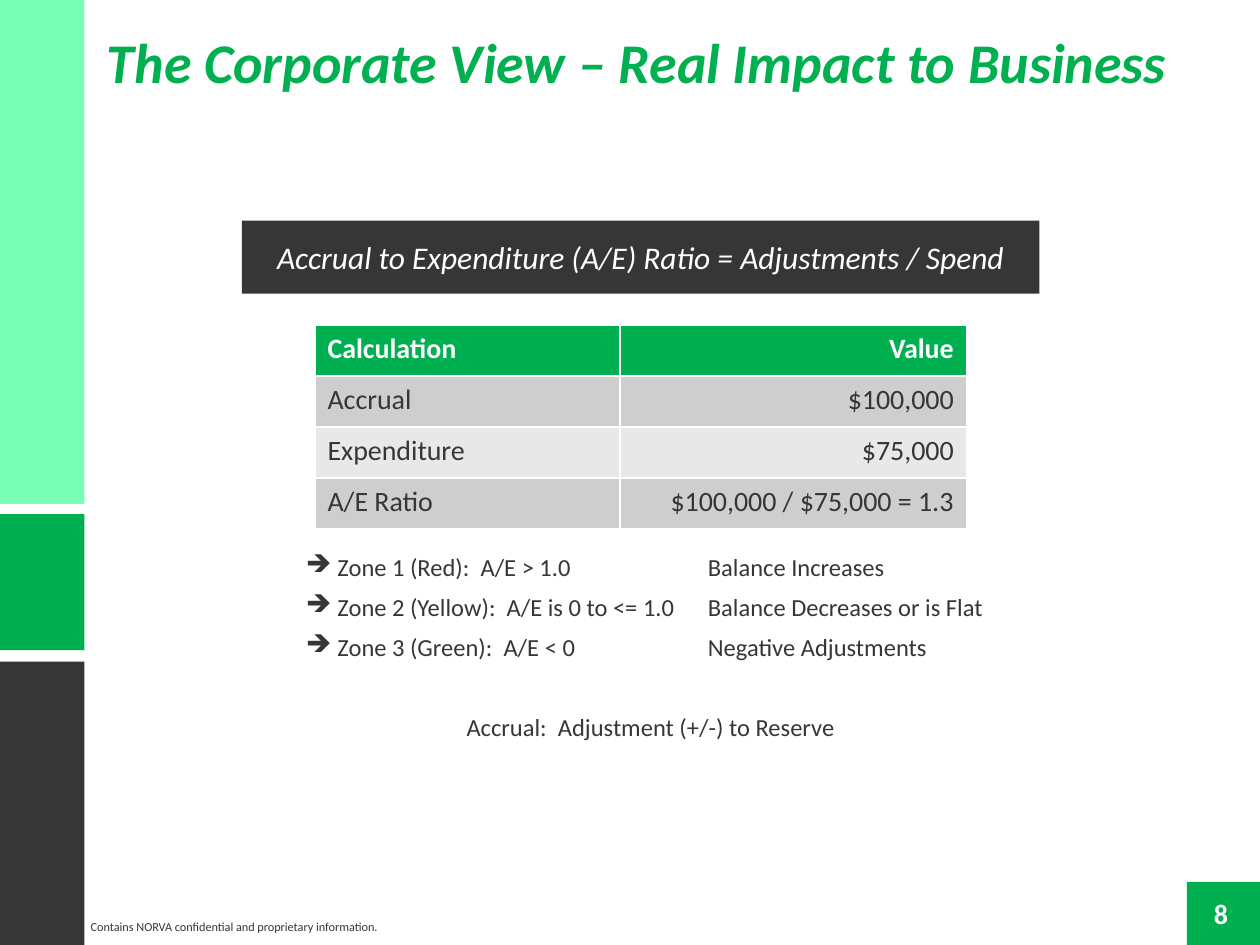
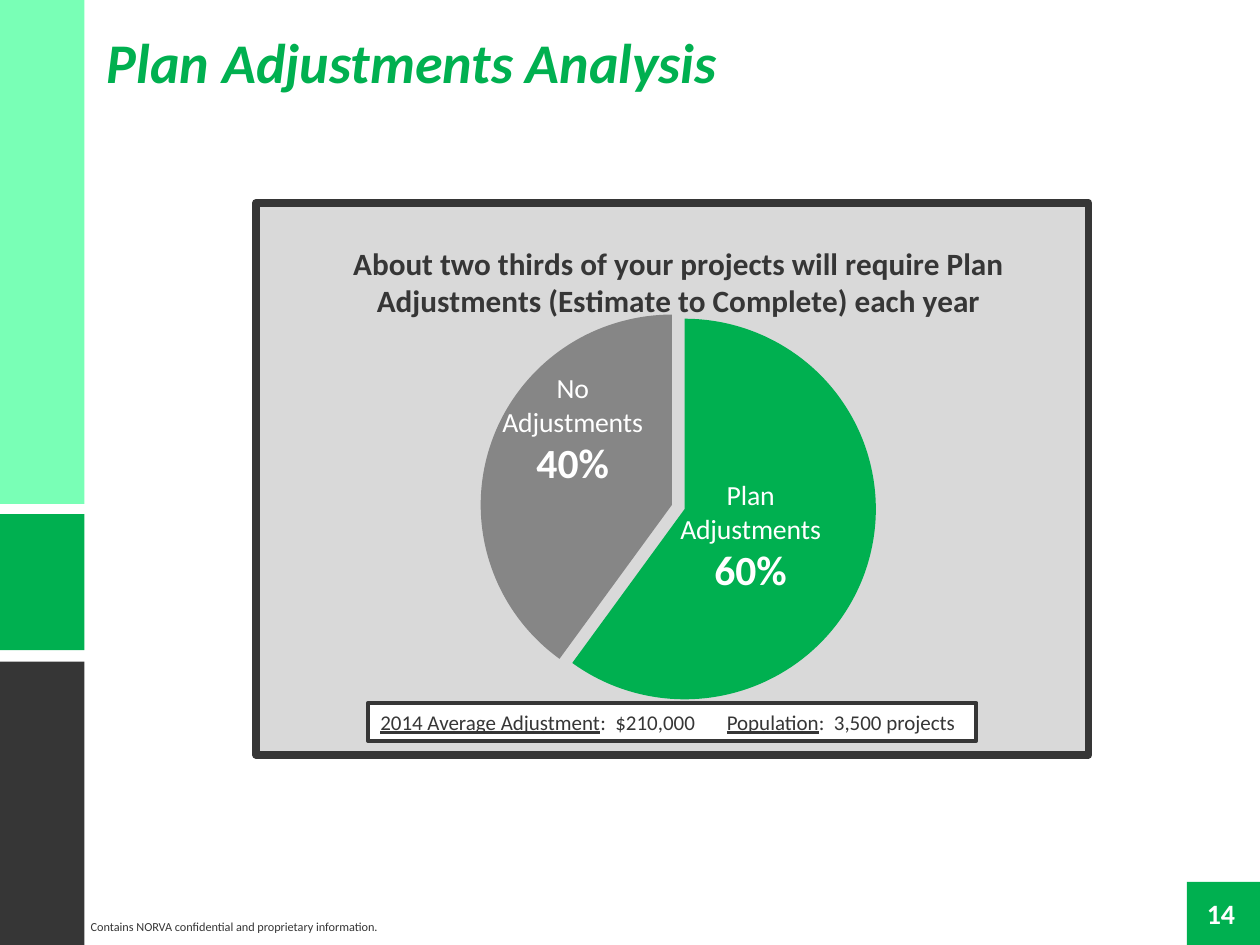
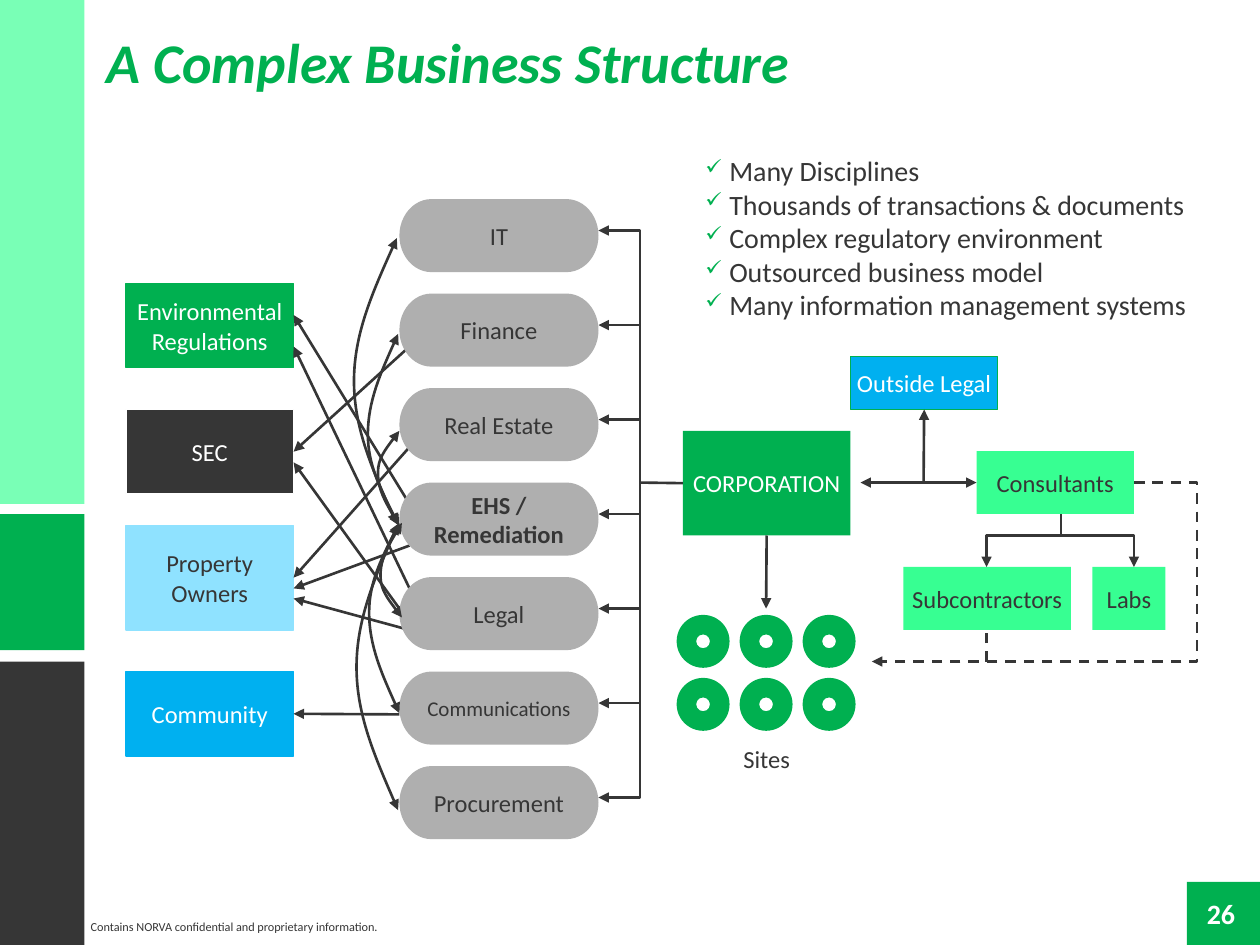
from dataclasses import dataclass, field
from typing import Any, NamedTuple, Optional, Sequence

import lxml.etree
import pptx
import pptx.chart.data
import pptx.dml.color
import pptx.enum.chart
import pptx.enum.dml
import pptx.enum.shapes
import pptx.enum.text
import pptx.oxml
import pptx.oxml.ns
import pptx.util

Inches = pptx.util.Inches
Pt = pptx.util.Pt
qn = pptx.oxml.ns.qn
SHAPE = pptx.enum.shapes.MSO_SHAPE
ALIGN = pptx.enum.text.PP_ALIGN
ANCHOR = pptx.enum.text.MSO_ANCHOR

FONT = "Calibri"
GREEN, MINT, LIME = "00B050", "79FFB6", "37FF92"
DARK, WHITE, BLUE, SKY = "363636", "FFFFFF", "00B0F0", "8FE2FF"
PILL, SLICE, PANEL = "AFAFAF", "868686", "D9D9D9"
ROW_FILLS = ["CECECE", "E8E8E8"]

Point = tuple[float, float]
Area = tuple[float, float, float, float]


@dataclass(frozen=True)
class Look:
    size: float
    color: str = DARK
    align: Any = ALIGN.LEFT
    font: dict = field(default_factory=dict)
    paragraph: dict = field(default_factory=dict)


class Bullet(NamedTuple):
    mark: str
    indent: float
    color: Optional[str] = None
    percent: int = 100


class Band(NamedTuple):
    area: Area
    fill: str


class Box(NamedTuple):
    text: str
    area: Area
    fill: str
    color: str = DARK
    line: Optional[str] = None
    paragraph: dict = {}


class Link(NamedTuple):
    start: Point
    end: Point
    tail: bool = True
    head: bool = False
    dash: bool = False
    from_box: Optional[tuple[str, int]] = None
    to_box: Optional[tuple[str, int]] = None


class Outline(NamedTuple):
    points: list[Point]
    head: bool = True
    dash: bool = False


class Curve(NamedTuple):
    start: Point
    bulge: float
    end_y: float
    middle: float


BANDS = [
    Band((9.42, 7, 0.58, 0.5), GREEN),
    Band((0, 5.25, 0.67, 2.25), DARK),
    Band((0, 4.08, 0.67, 1.08), GREEN),
    Band((0, 0, 0.67, 4), MINT),
]
TITLE = Look(32, GREEN, font={"bold": True, "italic": True})
FOOTER = Look(7)
PAGE_NUMBER = Look(16, WHITE, ALIGN.CENTER, {"bold": True})
SNUG = {"margin_left": 0, "margin_right": 0}
MIDDLE = {"vertical_anchor": ANCHOR.MIDDLE}


def rgb(color: str) -> pptx.dml.color.RGBColor:
    return pptx.dml.color.RGBColor.from_string(color)


def assign(target: Any, values: dict) -> None:
    for key, value in values.items():
        setattr(target, key, value)


def add_node(parent: Any, tag: str, **attributes: Any) -> Any:
    return lxml.etree.SubElement(parent, qn(tag), {k: str(v) for k, v in attributes.items()})


def paint(target: Any, color: str) -> None:
    target.solid()
    target.fore_color.rgb = rgb(color)


def write(paragraph: Any, text: str, look: Look, **extra: Any) -> None:
    paragraph.alignment = look.align
    assign(paragraph, look.paragraph)
    run = paragraph.add_run()
    run.text = text
    assign(run.font, {"name": FONT, "size": Pt(look.size), **look.font, **extra})
    run.font.color.rgb = rgb(look.color)


def write_lines(frame: Any, lines: Sequence[str], look: Look) -> list:
    for line in lines[1:]:
        frame.add_paragraph()
    for paragraph, line in zip(frame.paragraphs, lines):
        write(paragraph, line, look)
    return list(frame.paragraphs)


def add_bullet(paragraph: Any, bullet: Bullet) -> None:
    properties = paragraph._p.get_or_add_pPr()
    properties.set("marL", str(Inches(bullet.indent)))
    properties.set("indent", str(-Inches(bullet.indent)))
    if bullet.color:
        add_node(add_node(properties, "a:buClr"), "a:srgbClr", val=bullet.color)
    add_node(properties, "a:buSzPct", val=bullet.percent * 1000)
    add_node(properties, "a:buChar", char=bullet.mark)


def add_tab(paragraph: Any, position: float) -> None:
    tabs = add_node(paragraph._p.get_or_add_pPr(), "a:tabLst")
    add_node(tabs, "a:tab", pos=Inches(position), algn="l")


def add_text(slide: Any, area: Area, lines: Sequence[str], look: Look, **frame: Any) -> list:
    text_frame = slide.shapes.add_textbox(*map(Inches, area)).text_frame
    assign(text_frame, {"word_wrap": True, **frame})
    return write_lines(text_frame, lines, look)


def add_block(slide: Any, area: Area, fill: str, line: Optional[str] = None,
              width: float = 0.75, kind: Any = SHAPE.RECTANGLE, **frame: Any) -> Any:
    block = slide.shapes.add_shape(kind, *map(Inches, area))
    block.shadow.inherit = False
    paint(block.fill, fill)
    if line:
        block.line.color.rgb = rgb(line)
        block.line.width = Pt(width)
    else:
        block.line.fill.background()
    assign(block.text_frame, {"word_wrap": True, **frame})
    return block


def stroke(drawn: Any, head: bool, tail: bool, dash: bool) -> None:
    drawn.line.color.rgb = rgb(DARK)
    drawn.line.width = Pt(1.5)
    if dash:
        drawn.line.dash_style = pptx.enum.dml.MSO_LINE.DASH
    line = drawn.element.find(".//" + qn("a:ln"))
    for wanted, tag in ((head, "a:headEnd"), (tail, "a:tailEnd")):
        if wanted:
            add_node(line, tag, type="triangle")


def add_link(slide: Any, link: Link, blocks: dict) -> None:
    ends = map(Inches, (*link.start, *link.end))
    connector = slide.shapes.add_connector(pptx.enum.shapes.MSO_CONNECTOR.STRAIGHT, *ends)
    if link.from_box:
        connector.begin_connect(blocks[link.from_box[0]], link.from_box[1])
    if link.to_box:
        connector.end_connect(blocks[link.to_box[0]], link.to_box[1])
    stroke(connector, link.head, link.tail, link.dash)
    add_node(connector.element.spPr, "a:effectLst")


def add_outline(slide: Any, outline: Outline) -> Any:
    start, *rest = [(Inches(x), Inches(y)) for x, y in outline.points]
    builder = slide.shapes.build_freeform(*start)
    builder.add_line_segments(rest, close=False)
    drawn = builder.convert_to_shape()
    drawn.shadow.inherit = False
    drawn.fill.background()
    stroke(drawn, outline.head, True, outline.dash)
    return drawn


def add_curve(slide: Any, curve: Curve) -> None:
    x, y = curve.start
    half = (x + curve.bulge) / 2
    m = curve.middle
    shares = [0, m / 3, 2 * m / 3, m, m + (1 - m) / 3, m + 2 * (1 - m) / 3, 1]
    columns = [x, half, curve.bulge, curve.bulge, curve.bulge, half, x]
    points = [(cx, y + share * (curve.end_y - y)) for cx, share in zip(columns, shares)]
    path = add_outline(slide, Outline(points)).element.find(".//" + qn("a:path"))
    segments = path.findall(qn("a:lnTo"))
    for first in range(0, len(segments), 3):
        bend = add_node(path, "a:cubicBezTo")
        for segment in segments[first:first + 3]:
            bend.append(segment[0])
            path.remove(segment)


def add_page(deck: Any, title: str, number: str) -> Any:
    slide = deck.slides.add_slide(deck.slide_layouts[6])
    for band in BANDS:
        add_block(slide, band.area, band.fill)
    add_text(slide, (0.72, 7.25, 2.45, 0.22),
             ["Contains NORVA confidential and proprietary information."], FOOTER, **SNUG)
    add_text(slide, (9.42, 7.07, 0.54, 0.37), [number], PAGE_NUMBER, **SNUG)
    add_text(slide, (0.75, 0.17, 9.08, 0.64), [title], TITLE)
    return slide


def border_cell(cell: Any, outer: dict[str, bool]) -> None:
    properties = cell._tc.get_or_add_tcPr()
    for position, (side, is_outer) in enumerate(outer.items()):
        line = add_node(properties, f"a:ln{side}", w=Pt(1 if is_outer else 1.5))
        add_node(add_node(line, "a:solidFill"), "a:srgbClr", val=WHITE)
        properties.insert(position, line)


def add_ratio_table(slide: Any) -> None:
    rows = [("Calculation", "Value"), ("Accrual", "$100,000"), ("Expenditure", "$75,000"),
            ("A/E Ratio", "$100,000 / $75,000 = 1.3")]
    table = slide.shapes.add_table(len(rows), 2, *map(Inches, (2.5, 2.58, 5.17, 1.62))).table
    for column, width in zip(table.columns, (2.42, 2.75)):
        column.width = Inches(width)
    for r, row in enumerate(rows):
        for c, text in enumerate(row):
            cell = table.cell(r, c)
            paint(cell.fill, ROW_FILLS[(r - 1) % 2] if r else GREEN)
            border_cell(cell, {"L": c == 0, "R": c == 1, "T": r == 0, "B": r == len(rows) - 1})
            look = Look(16, DARK if r else WHITE, ALIGN.RIGHT if c else ALIGN.LEFT,
                        {"bold": r == 0})
            write(cell.text_frame.paragraphs[0], text, look)


def build_ratio(deck: Any) -> None:
    slide = add_page(deck, "The Corporate View – Real Impact to Business", "8")
    add_ratio_table(slide)
    zones = ["Zone 1 (Red):  A/E > 1.0\tBalance Increases",
             "Zone 2 (Yellow):  A/E is 0 to <= 1.0\tBalance Decreases or is Flat",
             "Zone 3 (Green):  A/E < 0\tNegative Adjustments"]
    paragraphs = add_text(slide, (2.33, 4.33, 5.67, 1.62),
                          [*zones, "Accrual:  Adjustment (+/-) to Reserve"],
                          Look(14, paragraph={"space_after": Pt(6)}))
    *zone_paragraphs, accrual = paragraphs
    for paragraph in zone_paragraphs:
        add_bullet(paragraph, Bullet("➔", 0.25))
        add_tab(paragraph, 3.19)
    assign(accrual, {"alignment": ALIGN.CENTER, "space_before": Pt(23)})
    formula = add_block(slide, (1.92, 1.75, 6.33, 0.58), DARK, **MIDDLE)
    write_lines(formula.text_frame, ["Accrual to Expenditure (A/E) Ratio = Adjustments / Spend"],
                Look(18, WHITE, ALIGN.CENTER, {"italic": True}))


def place(parent: Any, index: int, inner: bool = False, **values: float) -> None:
    for old in parent.findall(qn("c:layout")):
        parent.remove(old)
    layout = add_node(parent, "c:layout")
    manual = add_node(layout, "c:manualLayout")
    if inner:
        add_node(manual, "c:layoutTarget", val="inner")
    if inner or parent.tag == qn("c:title"):
        for mode in ("c:xMode", "c:yMode"):
            add_node(manual, mode, val="edge")
    for key, value in values.items():
        add_node(manual, f"c:{key}", val=value)
    parent.insert(index, layout)


def add_adjustment_pie(slide: Any) -> None:
    data = pptx.chart.data.CategoryChartData()
    data.categories = ["1", "2"]
    data.add_series("Series 1", [60, 40])
    chart = slide.shapes.add_chart(pptx.enum.chart.XL_CHART_TYPE.PIE,
                                   *map(Inches, (2, 1.58, 6.67, 4.44)), data).chart
    chart.has_legend = False
    assign(chart.font, {"name": FONT, "size": Pt(18)})
    chart.font.color.rgb = rgb(DARK)
    write_lines(chart.chart_title.text_frame,
                ["About two thirds of your projects will require Plan Adjustments "
                 "(Estimate to Complete) each year"],
                Look(18, align=ALIGN.CENTER, font={"bold": True}))
    pie = chart.plots[0]
    pie.vary_by_categories = True
    slices = [(GREEN, ["Plan", "Adjustments"], "60%"), (SLICE, ["No", "Adjustments"], "40%")]
    for index, (fill, caption, share) in enumerate(slices):
        point = pie.series[0].points[index]
        paint(point.format.fill, fill)
        point.format.line.fill.background()
        label = point.data_label
        write_lines(label.text_frame, caption, Look(16, WHITE, ALIGN.CENTER))
        write(label.text_frame.add_paragraph(), share,
              Look(24, WHITE, ALIGN.CENTER, {"bold": True}))
        label.position = pptx.enum.chart.XL_LABEL_POSITION.CENTER
    root = chart.element
    pulled_slice = list(root.iter(qn("c:dPt")))[1]
    explosion = add_node(pulled_slice, "c:explosion", val=7)
    pulled_slice.find(qn("c:spPr")).addprevious(explosion)
    for label, (x, y) in zip(root.iter(qn("c:dLbl")), [(-0.03, 0), (-0.01, -0.08)]):
        place(label, 1, x=x, y=y)
    for leader in root.iter(qn("c:showLeaderLines")):
        leader.set("val", "0")
    place(root.find(".//" + qn("c:title")), 1, x=0.11, y=0.06)
    place(root.find(".//" + qn("c:plotArea")), 0, inner=True, x=0.08, y=0.21, w=0.87, h=0.69)
    root.find(qn("c:chart")).addnext(pptx.oxml.parse_xml(
        f'<c:spPr {pptx.oxml.ns.nsdecls("c", "a")}>'
        f'<a:solidFill><a:srgbClr val="{PANEL}"/></a:solidFill><a:ln w="{Pt(4.5)}">'
        f'<a:solidFill><a:srgbClr val="{DARK}"/></a:solidFill><a:round/></a:ln></c:spPr>'))


def build_adjustments(deck: Any) -> None:
    slide = add_page(deck, "Plan Adjustments Analysis", "14")
    add_adjustment_pie(slide)
    summary = add_block(slide, (2.92, 5.58, 4.83, 0.3), WHITE, DARK, 2.25,
                        vertical_anchor=ANCHOR.TOP).text_frame.paragraphs[0]
    for term, value in [("2014 Average Adjustment", ":  $210,000\t"),
                        ("Population", ":  3,500 projects")]:
        write(summary, term, Look(12), underline=True)
        write(summary, value, Look(12))
    add_tab(summary, 2.75)


BOXES = [
    Box("Environmental Regulations", (1, 2.25, 1.33, 0.67), GREEN, WHITE, GREEN),
    Box("SEC", (1, 3.25, 1.33, 0.67), DARK, WHITE, WHITE),
    Box("Property Owners", (1, 4.17, 1.33, 0.83), SKY, DARK, SKY, {"line_spacing": Pt(17)}),
    Box("Community", (1, 5.33, 1.33, 0.67), BLUE, WHITE, BLUE),
    Box("CORPORATION", (5.42, 3.42, 1.33, 0.83), GREEN, WHITE),
    Box("Outside Legal", (6.75, 2.83, 1.17, 0.42), BLUE, WHITE, GREEN),
    Box("Consultants", (7.75, 3.58, 1.25, 0.5), LIME),
    Box("Labs", (8.67, 4.5, 0.58, 0.5), LIME),
    Box("Subcontractors", (7.17, 4.5, 1.33, 0.5), LIME),
]
DEPARTMENTS = ["IT", "Finance", "Real Estate", "EHS / Remediation", "Legal",
               "Communications", "Procurement"]
DEPARTMENT_STEP = 0.75
LINKS = [
    Link((6.08, 4.25), (6.08, 4.83), from_box=("CORPORATION", 2)),
    Link((7.83, 5.25), (7.83, 5), tail=False, dash=True),
    Link((8.42, 4.25), (8.42, 4.08), tail=False),
    Link((5.42, 3.83), (5.08, 3.83), tail=False, from_box=("CORPORATION", 1)),
    Link((6.83, 3.83), (7.75, 3.83), head=True, to_box=("Consultants", 1)),
    Link((7.33, 3.83), (7.33, 3.25), to_box=("Outside Legal", 2)),
    Link((3.25, 4), (2.33, 2.5)),
    Link((3.25, 4.67), (2.33, 2.75)),
    Link((3.25, 2.75), (2.33, 3.58), to_box=("SEC", 3)),
    Link((3.17, 4.83), (2.33, 3.67)),
    Link((3.24, 3.56), (2.33, 4.58), to_box=("Property Owners", 3)),
    Link((3.25, 4.33), (2.33, 4.67)),
    Link((3.25, 5), (2.33, 4.75)),
    Link((3.17, 5.67), (2.33, 5.67), to_box=("Community", 3)),
    *[Link((5.08, 1.83 + row * DEPARTMENT_STEP), (4.75, 1.83 + row * DEPARTMENT_STEP))
      for row in range(1, len(DEPARTMENTS) - 1)],
]
OUTLINES = [
    Outline([(9, 3.83), (9.5, 3.83), (9.5, 5.25), (6.92, 5.25)], head=False, dash=True),
    Outline([(7.83, 4.5), (7.83, 4.25), (9, 4.25), (9, 4.5)]),
    Outline([(4.75, 1.83), (5.08, 1.83), (5.08, 6.33), (4.75, 6.33)]),
]
CURVES = [
    Curve((3.17, 4.17), 3, 3.42, 0.56),
    Curve((3.16, 4.16), 2.92, 2.65, 0.47),
    Curve((3.15, 4.16), 2.81, 1.89, 0.5),
    Curve((3.16, 4.16), 2.83, 6.43, 0.5),
    Curve((3.17, 4.15), 2.93, 5.66, 0.47),
    Curve((3.19, 4.15), 3.02, 4.9, 0.56),
]


def build_structure(deck: Any) -> None:
    slide = add_page(deck, "A Complex Business Structure", "26")
    advantages = ["Many Disciplines", "Thousands of transactions & documents",
                  "Complex regulatory environment", "Outsourced business model",
                  "Many information management systems"]
    for paragraph in add_text(slide, (5.5, 1.17, 4.17, 1.45), advantages, Look(16)):
        add_bullet(paragraph, Bullet("✓", 0.19, GREEN, 75))
    blocks = {}
    for box in BOXES:
        block = add_block(slide, box.area, box.fill, box.line, **SNUG, **MIDDLE)
        write_lines(block.text_frame, [box.text],
                    Look(14, box.color, ALIGN.CENTER, paragraph=box.paragraph))
        blocks[box.text] = block
    for link in LINKS:
        add_link(slide, link, blocks)
    for row, department in enumerate(DEPARTMENTS):
        pill = add_block(slide, (3.17, 1.58 + row * DEPARTMENT_STEP, 1.58, 0.58), PILL,
                         kind=SHAPE.FLOWCHART_TERMINATOR, **SNUG, **MIDDLE)
        write_lines(pill.text_frame, [department],
                    Look(12 if department == "Communications" else 14, align=ALIGN.CENTER,
                         font={"bold": department.startswith("EHS")}))
    for outline in OUTLINES:
        add_outline(slide, outline)
    for curve in CURVES:
        add_curve(slide, curve)
    for site in range(6):
        row, column = divmod(site, 3)
        donut = add_block(slide, (5.37 + column * 0.5, 4.88 + row * 0.5, 0.42, 0.42), GREEN,
                          kind=SHAPE.DONUT)
        donut.adjustments[0] = 0.37
    add_text(slide, (5.75, 5.86, 0.67, 0.34), ["Sites"], Look(14, align=ALIGN.CENTER))


def main() -> None:
    deck = pptx.Presentation()
    assign(deck, {"slide_width": Inches(10), "slide_height": Inches(7.5)})
    for build in (build_ratio, build_adjustments, build_structure):
        build(deck)
    deck.save("out.pptx")


if __name__ == "__main__":
    main()
